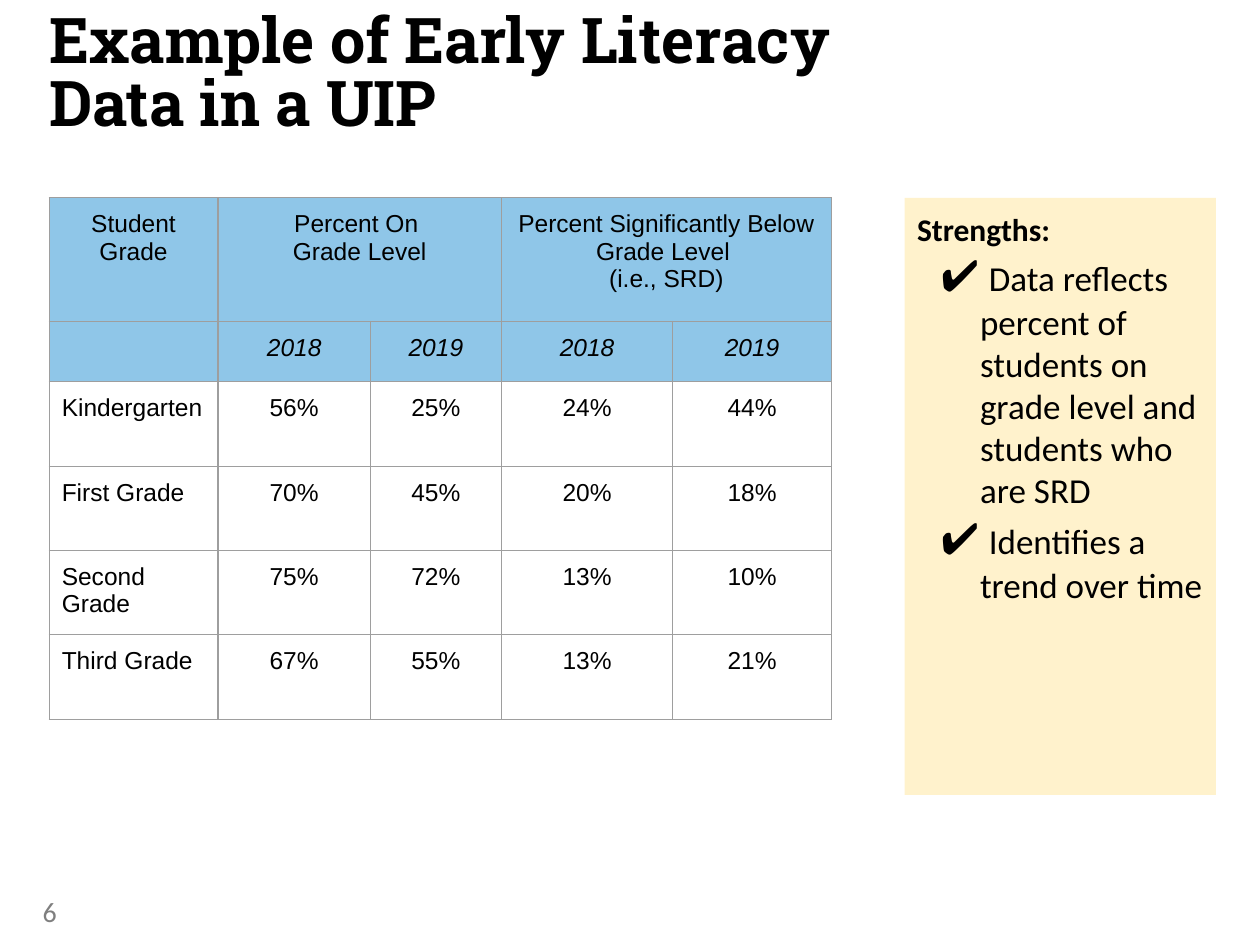
from dataclasses import dataclass

from lxml.etree import SubElement
from pptx import Presentation
from pptx.dml.color import RGBColor
from pptx.enum.shapes import MSO_SHAPE
from pptx.enum.text import MSO_ANCHOR as Anchor, PP_ALIGN as Align
from pptx.oxml.ns import qn
from pptx.util import Inches, Pt


@dataclass(frozen=True)
class Theme:
    """Colours, fonts and type sizes of the slide."""
    ink: str = "000000"
    muted: str = "7F7F7F"
    header: str = "8FC6E8"
    panel: str = "FFF2CC"
    border: str = "9E9E9E"
    title_font: str = "Roboto Slab"
    body_font: str = "Calibri"
    table_font: str = "Arial"
    title_size: int = 36
    check_size: int = 25
    body_size: int = 20
    heading_size: int = 18
    number_size: int = 16
    table_size: int = 14


THEME = Theme()
COLUMNS = (1.34, 1.21, 1.04, 1.36, 1.26)
ROWS = (0.98, 0.48, 0.67, 0.67, 0.67, 0.67)
HEADINGS = {
    0: ["Student Grade"],
    1: ["Percent On ", "Grade Level"],
    3: ["Percent Significantly Below Grade Level ", "(i.e., SRD)"],
}
RESULTS = (
    ("", "2018", "2019", "2018", "2019"),
    ("Kindergarten", "56%", "25%", "24%", "44%"),
    ("First Grade", "70%", "45%", "20%", "18%"),
    ("Second Grade", "75%", "72%", "13%", "10%"),
    ("Third Grade", "67%", "55%", "13%", "21%"),
)
STRENGTHS = (
    "Data reflects percent of students on grade level and students who are SRD",
    "Identifies a trend over time",
)


def add_text(paragraph, text, *, size, font=THEME.body_font, color=THEME.ink,
             bold=False, italic=False, align=Align.LEFT):
    """Append a formatted run to a paragraph."""
    paragraph.alignment = align
    run = paragraph.add_run()
    run.text = text
    run.font.size = Pt(size)
    run.font.name = font
    run.font.bold = bold
    run.font.italic = italic
    run.font.color.rgb = RGBColor.from_string(color)


def set_frame(frame, margin_x, margin_y, anchor=Anchor.TOP):
    """Wrap a text frame and set its margins and anchor."""
    frame.word_wrap = True
    frame.vertical_anchor = anchor
    frame.margin_left = frame.margin_right = Inches(margin_x)
    frame.margin_top = frame.margin_bottom = Inches(margin_y)


def add_title(slide, left, top, width, height):
    """Place the slide title."""
    box = slide.shapes.add_textbox(left, top, width, height)
    set_frame(box.text_frame, 0, 0)
    paragraph = box.text_frame.paragraphs[0]
    paragraph.line_spacing = 0.83
    add_text(paragraph, "Example of Early Literacy Data in a UIP",
             size=THEME.title_size, font=THEME.title_font, bold=True)


def add_slide_number(slide, left, top, width, height):
    """Place the slide number."""
    box = slide.shapes.add_textbox(left, top, width, height)
    set_frame(box.text_frame, 0.1, 0.05, Anchor.MIDDLE)
    add_text(box.text_frame.paragraphs[0], "6", size=THEME.number_size, color=THEME.muted)


def set_borders(cell):
    """Draw a thin line on all four sides of a cell."""
    properties = cell._tc.get_or_add_tcPr()
    for position, side in enumerate(("lnL", "lnR", "lnT", "lnB")):
        line = SubElement(properties, qn(f"a:{side}"), w=str(Pt(0.75)))
        fill = SubElement(line, qn("a:solidFill"))
        SubElement(fill, qn("a:srgbClr"), val=THEME.border)
        properties.insert(position, line)


def fill_cell(cell, lines, *, header=False, italic=False, align=Align.CENTER):
    """Write lines into a cell and set its fill."""
    if header:
        cell.fill.solid()
        cell.fill.fore_color.rgb = RGBColor.from_string(THEME.header)
    else:
        cell.fill.background()
    if not any(lines):
        return
    cell.margin_left = cell.margin_right = Inches(0.1)
    cell.margin_top = cell.margin_bottom = Inches(0.1)
    frame = cell.text_frame
    for index, line in enumerate(lines):
        paragraph = frame.add_paragraph() if index else frame.paragraphs[0]
        add_text(paragraph, line, size=THEME.table_size, font=THEME.table_font,
                 italic=italic, align=align)


def add_results_table(slide, left, top, width, height):
    """Place the literacy results by grade and year."""
    table = slide.shapes.add_table(len(ROWS), len(COLUMNS), left, top, width, height).table
    table.first_row = table.horz_banding = False
    for column, size in zip(table.columns, COLUMNS):
        column.width = Inches(size)
    for row, size in zip(table.rows, ROWS):
        row.height = Inches(size)
    for column in range(len(COLUMNS)):
        fill_cell(table.cell(0, column), HEADINGS.get(column, []), header=True)
    for row, values in enumerate(RESULTS, start=1):
        for column, value in enumerate(values):
            fill_cell(table.cell(row, column), [value], header=row == 1, italic=row == 1,
                      align=Align.CENTER if column else Align.LEFT)
    for cell in table.iter_cells():
        set_borders(cell)
    for column in (1, 3):
        table.cell(0, column).merge(table.cell(0, column + 1))


def add_strengths(slide, left, top, width, height):
    """Place the panel that lists the strengths."""
    panel = slide.shapes.add_shape(MSO_SHAPE.RECTANGLE, left, top, width, height)
    panel.shadow.inherit = False
    panel.fill.solid()
    panel.fill.fore_color.rgb = RGBColor.from_string(THEME.panel)
    panel.line.fill.background()
    frame = panel.text_frame
    set_frame(frame, 0.1, 0.1)
    add_text(frame.paragraphs[0], "Strengths:", size=THEME.heading_size, bold=True)
    for strength in STRENGTHS:
        paragraph = frame.add_paragraph()
        properties = paragraph._p.get_or_add_pPr()
        properties.set("marL", str(Inches(0.5)))
        properties.set("indent", str(Inches(-0.31)))
        add_text(paragraph, "✔ ", size=THEME.check_size, bold=True)
        add_text(paragraph, strength, size=THEME.body_size)


def main():
    """Build and save the slide."""
    presentation = Presentation()
    presentation.slide_width, presentation.slide_height = Inches(10), Inches(7.5)
    slide = presentation.slides.add_slide(presentation.slide_layouts[6])
    add_title(slide, Inches(0.39), Inches(0.11), Inches(6.65), Inches(0.83))
    add_slide_number(slide, Inches(0.24), Inches(7.03), Inches(2.25), Inches(0.4))
    add_results_table(slide, Inches(0.39), Inches(1.57),
                      Inches(sum(COLUMNS)), Inches(sum(ROWS)))
    add_strengths(slide, Inches(7.18), Inches(1.57), Inches(2.47), Inches(4.74))
    presentation.save("out.pptx")


if __name__ == "__main__":
    main()
